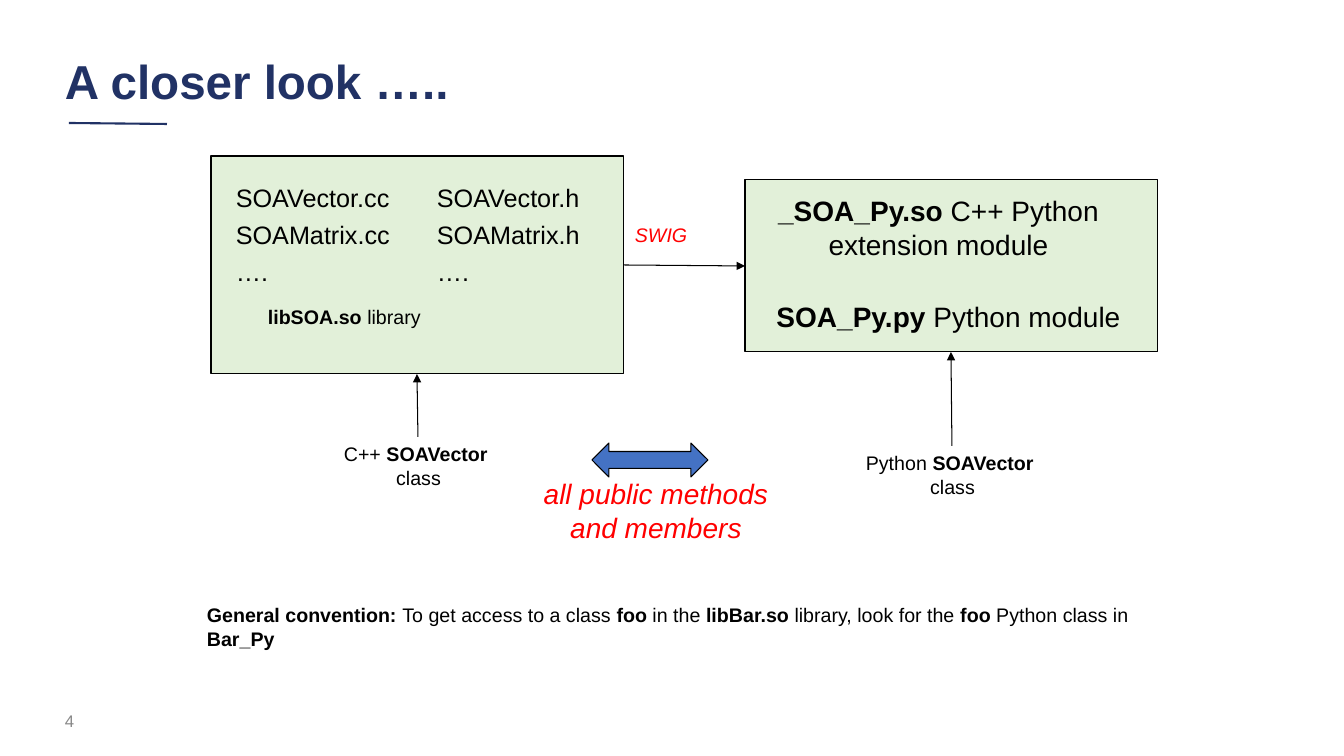
from lxml.etree import SubElement
from pptx import Presentation
from pptx.dml.color import RGBColor
from pptx.enum.shapes import MSO_CONNECTOR, MSO_SHAPE
from pptx.enum.text import MSO_ANCHOR, PP_ALIGN
from pptx.oxml.ns import qn
from pptx.util import Pt

PX = 914400 / 100.8
BLACK, NAVY, GREEN, BLUE, RED, GREY = (
    "000000", "213265", "E2F0D9", "4472C4", "FF0000", "888888")


def px(*lengths):
    return [round(length * PX) for length in lengths]


def color(hex_string):
    return RGBColor.from_string(hex_string)


def add_panel(slide, kind, box, fill):
    shape = slide.shapes.add_shape(kind, *px(*box))
    shape.shadow.inherit = False
    shape.fill.solid()
    shape.fill.fore_color.rgb = color(fill)
    shape.line.color.rgb = color(BLACK)
    shape.line.width = Pt(0.75)


def add_line(slide, ends, line_color=BLACK, width=0.75, arrow=True):
    connector = slide.shapes.add_connector(MSO_CONNECTOR.STRAIGHT, *px(*ends))
    connector.line.color.rgb = color(line_color)
    connector.line.width = Pt(width)
    properties = connector._element.spPr
    if arrow:
        SubElement(properties.find(qn("a:ln")), qn("a:tailEnd"), type="triangle")
    SubElement(properties, qn("a:effectLst"))


def add_text(slide, box, lines, size, text_color=BLACK, align=PP_ALIGN.LEFT,
             wrap=True, italic=False, anchor=MSO_ANCHOR.TOP, gap=0, spacing=None):
    """Add one paragraph per line; ** switches bold on and off."""
    frame = slide.shapes.add_textbox(*px(*box)).text_frame
    frame.word_wrap = wrap
    frame.vertical_anchor = anchor
    for index, line in enumerate(lines):
        paragraph = frame.add_paragraph() if index else frame.paragraphs[0]
        paragraph.alignment = align
        paragraph.line_spacing = spacing
        if index and gap:
            paragraph.space_before = Pt(gap)
        font = paragraph.font
        font.name, font.size, font.italic = "Arial", Pt(size), italic
        font.color.rgb = color(text_color)
        for part, words in enumerate(line.split("**")):
            if words:
                run = paragraph.add_run()
                run.text = words
                run.font.bold = part % 2 == 1


def main():
    presentation = Presentation()
    presentation.slide_width, presentation.slide_height = px(1344, 756)
    slide = presentation.slides.add_slide(presentation.slide_layouts[6])
    center = PP_ALIGN.CENTER

    add_text(slide, (55, 46, 1121, 77), ["**A closer look …..**"], 34, NAVY,
             anchor=MSO_ANCHOR.MIDDLE, spacing=0.9)
    add_line(slide, (69, 123, 167, 124), NAVY, 1.5, arrow=False)
    add_text(slide, (55, 701, 302, 40), ["4"], 12, GREY, anchor=MSO_ANCHOR.MIDDLE)

    add_panel(slide, MSO_SHAPE.RECTANGLE, (211, 156, 413, 218), GREEN)
    for left, width, extension in ((226, 180, "cc"), (427, 168, "h")):
        files = [f"SOAVector.{extension}", f"SOAMatrix.{extension}", "…."]
        add_text(slide, (left, 177, width, 111), files, 18, wrap=False, gap=5)
    add_text(slide, (258, 300, 174, 34), ["**libSOA.so** library"], 14, wrap=False)

    add_panel(slide, MSO_SHAPE.RECTANGLE, (745, 180, 413, 172), GREEN)
    add_text(slide, (726, 189, 425, 78),
             ["**_SOA_Py.so **C++ Python extension module"], 20, align=center)
    add_text(slide, (736, 295, 425, 44), ["**SOA_Py.py** Python module"], 20,
             align=center)

    add_line(slide, (624, 265, 745, 266))
    add_text(slide, (625, 218, 74, 34), ["SWIG"], 14, RED, wrap=False, italic=True)

    add_text(slide, (242, 437, 353, 57), ["C++ **SOAVector **", "class"], 14,
             align=center)
    add_line(slide, (418, 437, 417, 374))
    add_text(slide, (751, 446, 403, 57), ["Python **SOAVector **", "class"], 14,
             align=center)
    add_line(slide, (952, 446, 951, 352))

    add_panel(slide, MSO_SHAPE.LEFT_RIGHT_ARROW, (592, 443, 116, 34), BLUE)
    add_text(slide, (524, 472, 264, 78), ["all public methods and members"], 20, RED,
             align=center, italic=True)
    add_text(slide, (197, 598, 951, 57),
             ["**General convention: **To get access to a class **foo** in the "
              "**libBar.so** library, look for the **foo** Python class in **Bar_Py**"],
             14)

    presentation.save("out.pptx")


if __name__ == "__main__":
    main()
